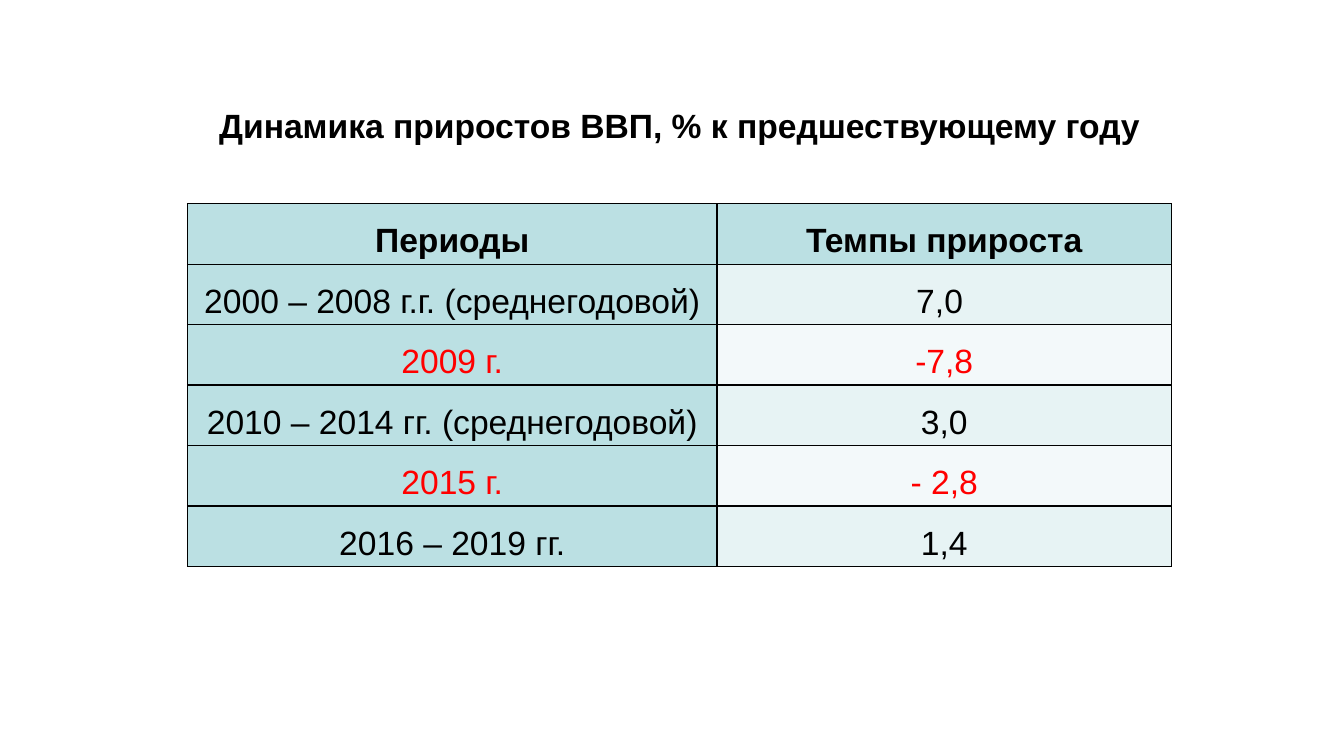
from dataclasses import dataclass

from lxml import etree
from pptx import Presentation
from pptx import util as u
from pptx.dml.color import RGBColor
from pptx.enum import text
from pptx.oxml.ns import qn


@dataclass(frozen=True)
class Theme:
    """Colours and type sizes of the slide."""
    font: str = "Arial"
    size: int = 24
    ink: str = "000000"
    decline: str = "FF0000"
    header: str = "BBE0E3"
    bands: tuple = ("E7F3F4", "F3F9FA")
    border: float = 1


THEME = Theme()
TITLE = "Динамика приростов ВВП, % к предшествующему году"
GROWTH = [
    ("Периоды", "Темпы прироста"),
    ("2000 – 2008 г.г. (среднегодовой)", "7,0 "),
    ("2009 г.", "-7,8"),
    ("2010 – 2014 гг. (среднегодовой)", "3,0"),
    ("2015 г.", "- 2,8"),
    ("2016 – 2019 гг.", "1,4"),
]


def write_centred(frame, wording, colour, bold):
    """Put one centred paragraph in a text frame and return it."""
    frame.text = wording
    para = frame.paragraphs[0]
    para.alignment = text.PP_ALIGN.CENTER
    font = para.runs[0].font
    font.name, font.size, font.bold = THEME.font, u.Pt(THEME.size), bold
    font.color.rgb = RGBColor.from_string(colour)
    return para


def add_borders(cell):
    """Draw a thin line on all four sides of a cell."""
    properties = cell._tc.get_or_add_tcPr()
    for position, side in enumerate(("a:lnL", "a:lnR", "a:lnT", "a:lnB")):
        line = etree.Element(qn(side), w=str(u.Pt(THEME.border)))
        fill = etree.SubElement(line, qn("a:solidFill"))
        etree.SubElement(fill, qn("a:srgbClr"), val=THEME.ink)
        properties.insert(position, line)


def place_title(page, box):
    """Place the slide title in the given box."""
    title = page.shapes.title
    title.left, title.top, title.width, title.height = map(u.Inches, box)
    frame = title.text_frame
    para = write_centred(frame, TITLE, THEME.ink, True)
    frame.word_wrap = False
    frame.auto_size = text.MSO_AUTO_SIZE.NONE
    frame.vertical_anchor = text.MSO_ANCHOR.MIDDLE
    para._p.get_or_add_pPr().set("indent", str(u.Inches(0.2)))


def style_cell(cell, wording, fill, colour, bold):
    """Fill, frame and letter one table cell."""
    cell.fill.solid()
    cell.fill.fore_color.rgb = RGBColor.from_string(fill)
    cell.margin_left = cell.margin_right = u.Inches(0.07)
    cell.margin_top = cell.margin_bottom = 0
    para = write_centred(cell.text_frame, wording, colour, bold)
    para.line_spacing = 1.5
    add_borders(cell)


def place_growth_table(page, box, shares):
    """Place the growth table in the box, with columns as shares of its width."""
    frame = page.shapes.add_table(len(GROWTH), len(shares), *map(u.Inches, box))
    table = frame.table
    for column, share in zip(table.columns, shares):
        column.width = u.Inches(box[2] * share)
    for row, entries in enumerate(GROWTH):
        is_header = row == 0
        colour = THEME.decline if entries[1].startswith("-") else THEME.ink
        for column, wording in enumerate(entries):
            is_label = is_header or column == 0
            fill = THEME.header if is_label else THEME.bands[(row - 1) % 2]
            style_cell(table.cell(row, column), wording, fill, colour, is_header)


def main():
    """Build the deck and save it."""
    deck = Presentation()
    deck.slide_width, deck.slide_height = u.Inches(13.33), u.Inches(7.5)
    page = deck.slides.add_slide(deck.slide_layouts[5])
    place_growth_table(page, (1.86, 2.02, 9.76, 3.6), (0.538, 0.462))
    place_title(page, (1.83, 0.99, 9.62, 0.5))
    deck.save("out.pptx")


if __name__ == "__main__":
    main()
